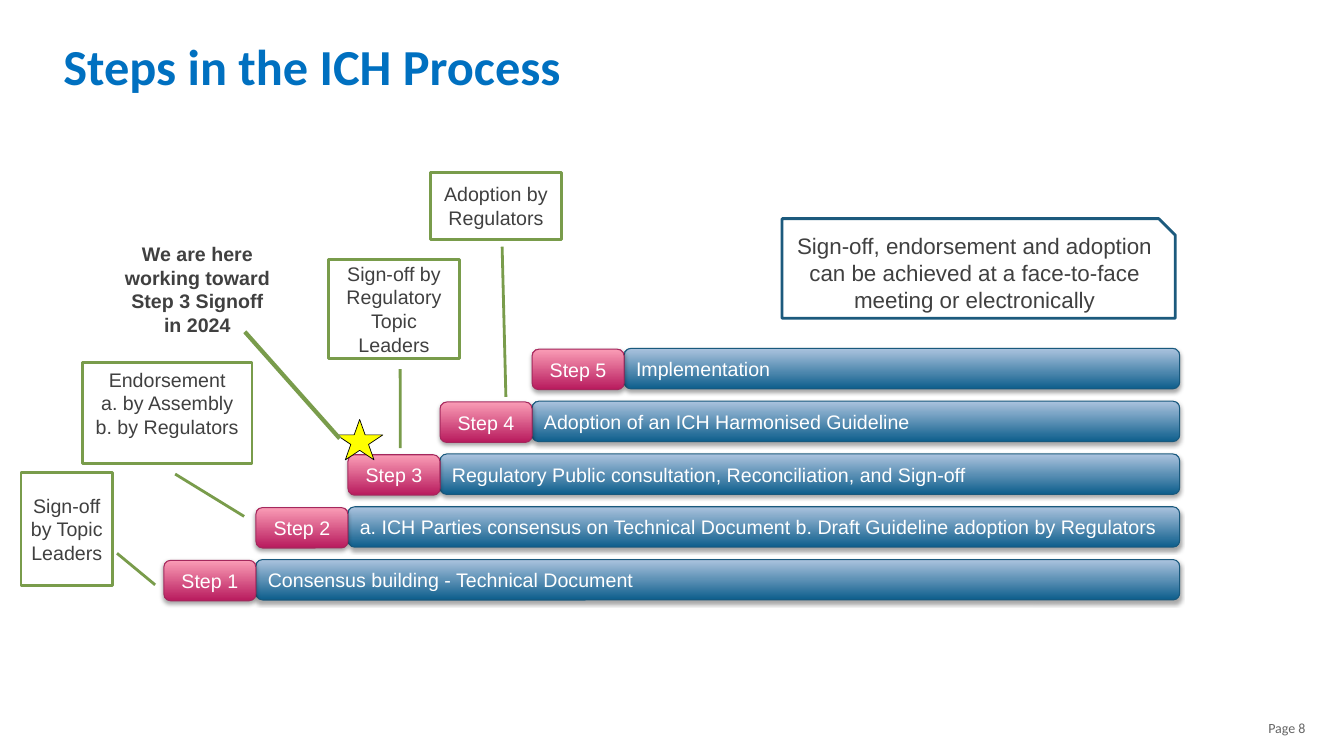
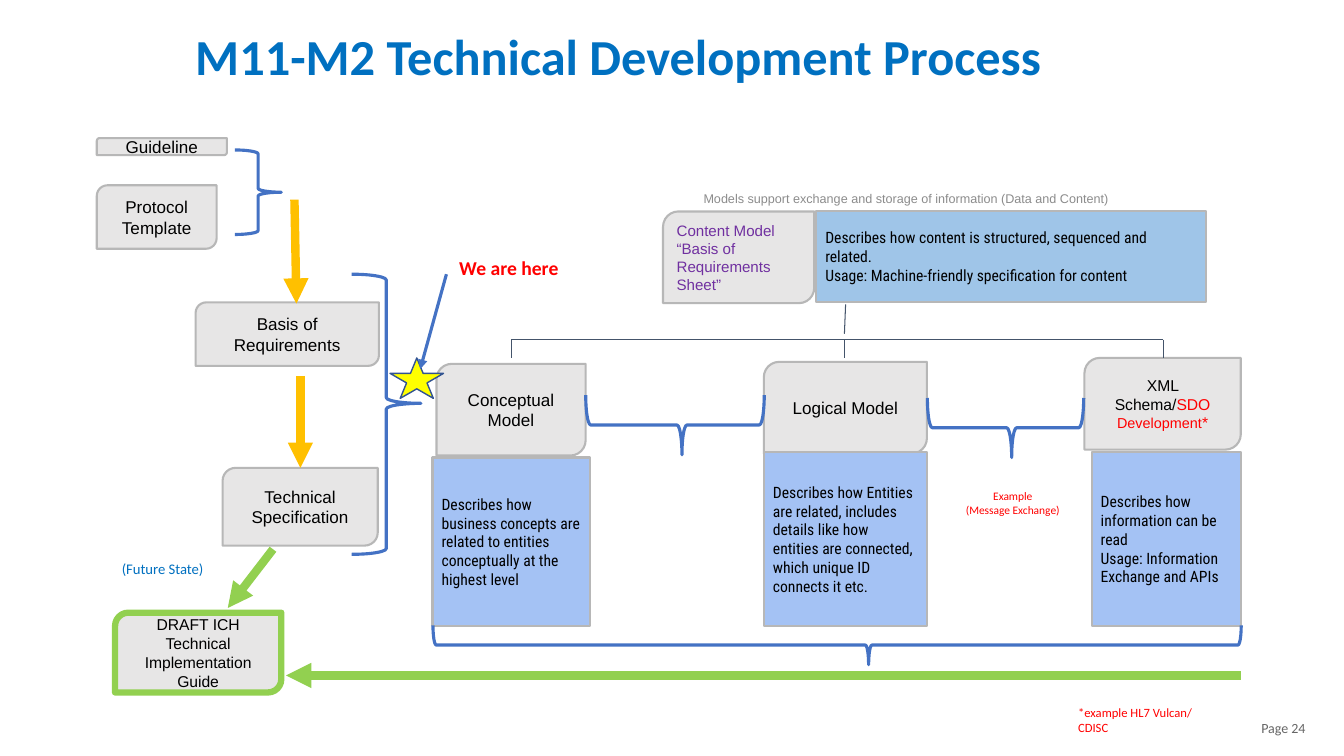
from lxml import etree
from pptx import Presentation
from pptx import util as u
from pptx.dml.color import RGBColor
from pptx.enum import shapes, text
from pptx.oxml import ns

TITLE_BLUE = RGBColor(0x00, 0x70, 0xC0)
PAGE_GREY = RGBColor(0x66, 0x66, 0x66)
CAPTION_GREY = RGBColor(0x8C, 0x8C, 0x8C)
BODY_GREY = RGBColor(0x40, 0x40, 0x40)
BLACK = RGBColor(0x00, 0x00, 0x00)
WHITE = RGBColor(0xFF, 0xFF, 0xFF)
RED = RGBColor(0xFF, 0x00, 0x00)
YELLOW = RGBColor(0xFF, 0xFF, 0x00)
PURPLE = RGBColor(0x70, 0x30, 0xA0)
BAR_DARK = RGBColor(0x0D, 0x5E, 0x8C)
BAR_LIGHT = RGBColor(0xAB, 0xC3, 0xDE)
BAR_EDGE = RGBColor(0x19, 0x59, 0x7D)
STEP_DARK = RGBColor(0xB8, 0x1A, 0x5D)
STEP_LIGHT = RGBColor(0xFA, 0x9D, 0xB6)
STEP_EDGE = RGBColor(0xA5, 0x28, 0x5D)
NOTE_EDGE = RGBColor(0x1C, 0x5A, 0x7D)
OLIVE = RGBColor(0x79, 0x9C, 0x4B)
BOX_GREY = RGBColor(0xE7, 0xE6, 0xE6)
BOX_EDGE = RGBColor(0xB7, 0xB7, 0xB7)
MODEL_BLUE = RGBColor(0xA4, 0xC2, 0xF4)
CONTENT_BLUE = RGBColor(0x9F, 0xC5, 0xE8)
BRACE_BLUE = RGBColor(0x44, 0x72, 0xC4)
STAR_EDGE = RGBColor(0x32, 0x54, 0x91)
TREE_SLATE = RGBColor(0x44, 0x54, 0x6A)
AMBER = RGBColor(0xFF, 0xC0, 0x00)
LIME = RGBColor(0x92, 0xD0, 0x50)

LEFT, CENTER, RIGHT = text.PP_ALIGN.LEFT, text.PP_ALIGN.CENTER, text.PP_ALIGN.RIGHT
TOP, MIDDLE = text.MSO_ANCHOR.TOP, text.MSO_ANCHOR.MIDDLE
KIND = shapes.MSO_SHAPE
DEFAULT_INSETS = (0.25, 0.13, 0.25, 0.13)
BOX_INSETS = (0.23, 0.23, 0.23, 0.23)


class Deck:
    """Holds the shared style and the current slide, and draws each kind of element."""

    def __init__(self):
        self.prs = Presentation()
        self.prs.slide_width, self.prs.slide_height = u.Cm(33.87), u.Cm(19.05)
        self.slide = None

    def start(self, title, title_at, page, align=LEFT):
        self.slide = self.prs.slides.add_slide(self.prs.slide_layouts[6])
        heading = self.label(title_at, [title], 36, TITLE_BLUE, align=align,
                             anchor=MIDDLE, bold=True)
        heading.text_frame.paragraphs[0].line_spacing = 0.9
        self.label((25.53, 17.83, 7.62, 1.02), [f"Page {page}"], 10, PAGE_GREY,
                   align=RIGHT, anchor=MIDDLE)

    def fill_text(self, holder, paragraphs, size, color, font="Arial", align=LEFT,
                  anchor=MIDDLE, bold=False, insets=DEFAULT_INSETS):
        frame = holder.text_frame
        frame.word_wrap = True
        frame.vertical_anchor = anchor
        (frame.margin_left, frame.margin_top,
         frame.margin_right, frame.margin_bottom) = (u.Cm(inset) for inset in insets)
        for index, content in enumerate(paragraphs):
            paragraph = frame.add_paragraph() if index else frame.paragraphs[0]
            paragraph.alignment = align
            pieces = [(content, size, color)] if isinstance(content, str) else content
            for words, points, tint in pieces:
                run = paragraph.add_run()
                run.text = words
                run.font.name, run.font.size, run.font.bold = font, u.Pt(points), bold
                run.font.color.rgb = tint

    def label(self, at, paragraphs, size, color, font="Calibri", anchor=TOP, **style):
        box = self.slide.shapes.add_textbox(*map(u.Cm, at))
        self.fill_text(box, paragraphs, size, color, font, anchor=anchor, **style)
        return box

    def shape(self, kind, at, fill, edge, weight, adjust=()):
        figure = self.slide.shapes.add_shape(kind, *map(u.Cm, at))
        figure.shadow.inherit = False
        if fill is None:
            figure.fill.background()
        else:
            figure.fill.solid()
            figure.fill.fore_color.rgb = fill
        figure.line.color.rgb = edge
        figure.line.width = u.Pt(weight)
        for index, value in enumerate(adjust):
            figure.adjustments[index] = value
        return figure

    def glossy(self, at, dark, light, edge, words, align):
        bar = self.shape(KIND.ROUNDED_RECTANGLE, at, dark, edge, 0.75)
        bar.fill.gradient()
        bar.fill.gradient_angle = 90
        for stop, color, position in zip(bar.fill.gradient_stops, (dark, light), (0, 1)):
            stop.color.rgb = color
            stop.position = position
        effects = bar._element.spPr.find(ns.qn("a:effectLst"))
        shadow = etree.SubElement(effects, ns.qn("a:outerShdw"), blurRad="40000",
                                  dist="23000", dir="5400000", rotWithShape="0")
        black = etree.SubElement(shadow, ns.qn("a:srgbClr"), val="000000")
        etree.SubElement(black, ns.qn("a:alpha"), val="35000")
        self.fill_text(bar, [words], 14, WHITE, align=align)

    def callout(self, at, pointer, paragraphs, anchor=MIDDLE):
        box = self.shape(KIND.LINE_CALLOUT_1, at, WHITE, OLIVE, 2, pointer)
        self.fill_text(box, paragraphs, 14, BODY_GREY, align=CENTER, anchor=anchor,
                       insets=(0.2, 0.13, 0.2, 0.13))

    def leaf(self, at, paragraphs, size=12.2, color=BLACK, align=CENTER,
             edge=BOX_EDGE, weight=1.5):
        box = self.shape(KIND.ROUND_2_DIAG_RECTANGLE, at, BOX_GREY, edge, weight, (0.167, 0))
        self.fill_text(box, paragraphs, size, color, align=align, insets=BOX_INSETS)

    def description(self, at, paragraphs, fill=MODEL_BLUE):
        box = self.shape(KIND.RECTANGLE, at, fill, BOX_EDGE, 1.5)
        self.fill_text(box, paragraphs, 11.2, BLACK, "Roboto Condensed", insets=BOX_INSETS)

    def brace(self, at, tip=0.461, rotation=0):
        figure = self.shape(KIND.RIGHT_BRACE, at, None, BRACE_BLUE, 2.25, (0.083, tip))
        figure.rotation = rotation

    def star(self, at, edge, weight):
        self.shape(KIND.STAR_5_POINT, at, YELLOW, edge, weight)

    def line(self, ends, color, weight, arrow=False):
        link = self.slide.shapes.add_connector(shapes.MSO_CONNECTOR.STRAIGHT, *map(u.Cm, ends))
        link.line.color.rgb = color
        link.line.width = u.Pt(weight)
        properties = link._element.spPr
        etree.SubElement(properties, ns.qn("a:effectLst"))
        if arrow:
            etree.SubElement(properties.find(ns.qn("a:ln")), ns.qn("a:tailEnd"), type="triangle")


def process_steps(deck):
    deck.start("Steps in the ICH Process", (1.35, 0.89, 28.8, 1.7), 8)
    steps = [
        "Consensus building - Technical Document",
        "a. ICH Parties consensus on Technical Document b. Draft Guideline adoption by Regulators",
        "Regulatory Public consultation, Reconciliation, and Sign-off",
        "Adoption of an ICH Harmonised Guideline",
        "Implementation",
    ]
    step_width, bar_height, right_edge = 2.32, 1.02, 29.73
    for index, activity in enumerate(steps):
        left, top = 4.13 + step_width * index, 14.1 - 1.33 * index
        bar_left = left + step_width
        deck.glossy((bar_left, top, right_edge - bar_left, bar_height),
                    BAR_DARK, BAR_LIGHT, BAR_EDGE, activity, LEFT)
        deck.glossy((left, top + 0.02, step_width, bar_height),
                    STEP_DARK, STEP_LIGHT, STEP_EDGE, f"Step {index + 1}", CENTER)

    deck.callout((0.53, 11.91, 2.31, 2.84), (0.716, 1.048, 0.996, 1.464),
                 ["Sign-off by Topic Leaders"])
    deck.callout((2.08, 9.14, 4.27, 2.54), (1.105, 0.547, 1.525, 0.954),
                 ["Endorsement", "a. by Assembly", "b. by Regulators"], TOP)
    deck.callout((8.28, 6.53, 3.3, 2.51), (1.105, 0.547, 1.897, 0.548),
                 ["Sign-off by Regulatory Topic Leaders"])
    deck.callout((10.85, 4.34, 3.3, 1.7), (1.105, 0.547, 3.331, 0.576),
                 ["Adoption by Regulators"])
    meeting_note = deck.shape(KIND.SNIP_1_RECTANGLE, (19.71, 5.51, 9.91, 2.51),
                              WHITE, NOTE_EDGE, 2)
    deck.fill_text(meeting_note, ["Sign-off, endorsement and adoption can be achieved "
                                  "at a face-to-face meeting or electronically"],
                   16, BODY_GREY, align=CENTER)
    deck.star((8.48, 10.57, 1.17, 1.02), BLACK, 0.5)
    deck.label((2.84, 5.97, 4.27, 2.64),
               ["We are here", "working toward Step 3 Signoff in 2024"],
               14, BODY_GREY, "Arial", align=CENTER, bold=True)
    deck.line((6.17, 8.36, 8.56, 11.05), OLIVE, 3)


def technical_development(deck):
    deck.start("M11-M2 Technical Development Process", (0.18, 0.25, 30.81, 2.51), 24, CENTER)
    deck.label((26.92, 17.63, 5.61, 1.02), ["*example HL7 Vulcan/", "CDISC"], 9, RED)
    deck.label((17.73, 4.62, 12.5, 1.22),
               ["Models support exchange and storage of information (Data and Content)"],
               9, CAPTION_GREY, "Arial", insets=(0, 0.23, 0.23, 0.23))

    deck.leaf((16.71, 5.33, 3.81, 2.31), ["Content Model", "“Basis of Requirements Sheet”"],
              10.8, PURPLE, LEFT)
    deck.description((20.57, 5.31, 9.83, 2.31),
                     ["Describes how content is structured, sequenced and related.",
                      "Usage: Machine-friendly specification for content"], CONTENT_BLUE)

    schema = [("XML Schema/", 11.2, BLACK), ("SDO ", 11.2, RED),
              ("Development", 10.3, RED), ("*", 11.2, RED)]
    models = [
        ((11, 9.17, 3.76, 2.31), "Conceptual Model", (10.9, 11.53, 3.96, 4.24),
         ["Describes how business concepts are related to entities conceptually "
          "at the highest level"]),
        ((19.25, 9.12, 4.11, 2.31), "Logical Model", (19.25, 11.4, 4.11, 4.37),
         ["Describes how Entities are related, includes details like how entities "
          "are connected, which unique ID connects it etc."]),
        ((27.33, 9.02, 3.94, 2.31), schema, (27.51, 11.4, 3.76, 4.37),
         ["Describes how information can be read",
          "Usage: Information Exchange and APIs"]),
    ]
    for name_at, name, detail_at, detail in models:
        deck.leaf(name_at, [name])
        deck.description(detail_at, detail)

    branches, branch_top = (12.88, 21.28, 29.31), 8.56
    deck.line((branches[0], branch_top, branches[-1], branch_top), TREE_SLATE, 0.75)
    for branch in branches:
        deck.line((branch, branch_top, branch, 9.02), TREE_SLATE, 0.75)
    deck.line((21.31, 7.67, 21.28, 8.41), TREE_SLATE, 0.75)

    for at, stage in [
        ((2.44, 3.48, 3.28, 0.43), "Guideline"),
        ((2.44, 4.67, 3.02, 1.6), "Protocol Template"),
        ((4.93, 7.62, 4.62, 1.6), "Basis of Requirements"),
        ((5.61, 11.79, 3.91, 1.96), "Technical Specification"),
    ]:
        deck.leaf(at, [stage])
    deck.leaf((2.9, 15.44, 4.19, 2.01), ["DRAFT ICH Technical Implementation Guide"],
              11.2, edge=LIME, weight=4.5)

    deck.brace((5.92, 3.78, 1.17, 2.13), 0.5)
    deck.brace((8.86, 6.91, 1.75, 7.06))
    for at in [(20.6, 6.07, 0.99, 20.37), (16.26, 8.46, 1.5, 4.5), (24.59, 8.81, 1.5, 3.94)]:
        deck.brace(at, rotation=90)

    for ends, color in [
        ((7.42, 5.03, 7.47, 7.65), AMBER),
        ((7.57, 9.47, 7.57, 11.79), AMBER),
        ((31.27, 17.02, 7.21, 17.02), LIME),
        ((6.88, 13.84, 5.74, 15.32), LIME),
    ]:
        deck.line(ends, color, 6, arrow=True)

    deck.label((2.82, 13.97, 3.1, 1.09), ["(Future State)"], 10.5, TITLE_BLUE)
    deck.label((23.72, 12.19, 3.61, 1.24), ["Example", "(Message Exchange)"], 8.2, RED,
               align=CENTER)
    deck.star((9.83, 9.02, 1.35, 1.02), STAR_EDGE, 1)
    deck.label((10.36, 6.32, 4.93, 0.86), ["We are here"], 14, RED, align=CENTER, bold=True)
    deck.line((11.25, 6.91, 10.59, 9.3), BRACE_BLUE, 2.25, arrow=True)


def main():
    deck = Deck()
    process_steps(deck)
    technical_development(deck)
    deck.prs.save("out.pptx")


if __name__ == "__main__":
    main()
